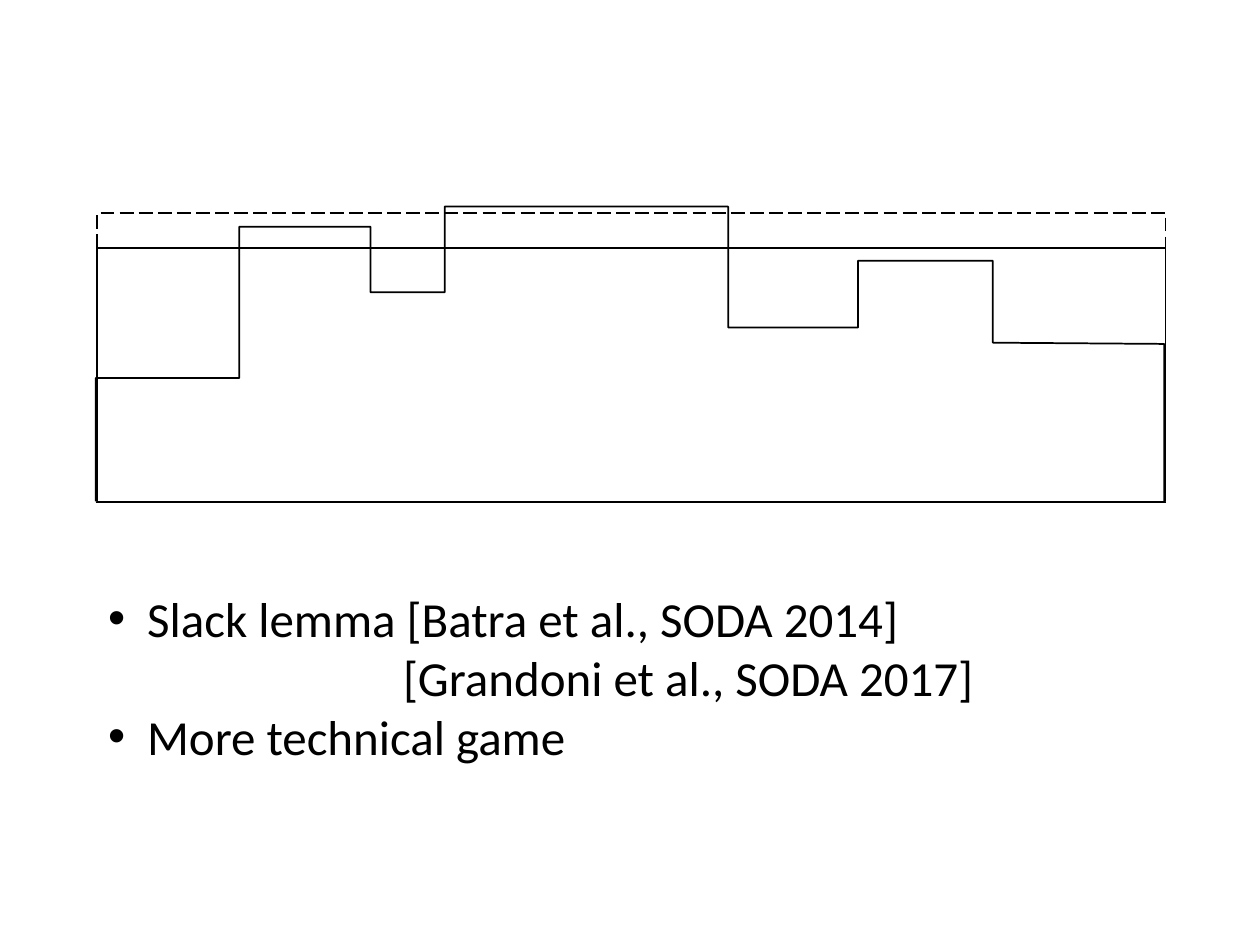
from lxml import etree
from pptx import Presentation
from pptx.dml.color import RGBColor
from pptx.enum.dml import MSO_LINE
from pptx.enum.shapes import MSO_CONNECTOR, MSO_SHAPE
from pptx.enum.text import MSO_AUTO_SIZE
from pptx.oxml.ns import qn
from pptx.util import Inches, Pt

STRAIGHT = MSO_CONNECTOR.STRAIGHT
RECTANGLE = MSO_SHAPE.RECTANGLE
LONG_DASH = MSO_LINE.LONG_DASH
FIT_SHAPE = MSO_AUTO_SIZE.SHAPE_TO_FIT_TEXT

COLORS = {"ink": "000000"}
FONT = "Calibri"
SKYLINE = [
    (0, 2.34), (0, 1.36), (1.14, 1.36), (1.14, 0.16), (2.18, 0.16),
    (2.18, 0.68), (2.77, 0.68), (2.77, 0), (5.02, 0), (5.02, 0.96),
    (6.05, 0.96), (6.05, 0.43), (7.12, 0.43), (7.12, 1.08), (8.48, 1.09),
    (8.48, 2.34),
]
POINTS = [
    ("Slack lemma [Batra et al., SODA 2014]", 0.31, True),
    ("[Grandoni et al., SODA 2017]", 2.34, False),
    ("More technical game", 0.31, True),
]


def style_line(line, width=1.0):
    """Draw a line in ink at the given width in points."""
    line.color.rgb = RGBColor.from_string(COLORS["ink"])
    line.width = Pt(width)


def style_outline(shape):
    """Leave a shape unfilled, without shadow, with an ink outline."""
    shape.shadow.inherit = False
    shape.fill.background()
    style_line(shape.line)


def add_frame(slide, left, top, width, height):
    """Add an outlined rectangle and return it."""
    frame = slide.shapes.add_shape(
        RECTANGLE, Inches(left), Inches(top), Inches(width), Inches(height))
    style_outline(frame)
    return frame


def add_skyline(slide, left, top, width, height):
    """Draw the stepped profile with its bounding strip, slack strip and base."""
    corners = [(Inches(left + x), Inches(top + y)) for x, y in SKYLINE]
    builder = slide.shapes.build_freeform(*corners[0])
    builder.add_line_segments(corners[1:], close=False)
    style_outline(builder.convert_to_shape())

    strip_top, slack = top + 0.33, 0.28
    add_frame(slide, left + 0.01, strip_top, width, top + height - strip_top)
    base_y = Inches(top + height + 0.01)
    base = slide.shapes.add_connector(
        STRAIGHT, Inches(left), base_y, Inches(left + width + 0.01), base_y)
    style_line(base.line, 0.75)
    etree.SubElement(base._element.spPr, qn("a:effectLst"))
    slack_frame = add_frame(slide, left + 0.01, strip_top - slack, width, slack)
    slack_frame.line.dash_style = LONG_DASH


def set_indent(paragraph, margin, bulleted):
    """Set the left margin and give the paragraph a hanging bullet if wanted."""
    properties = paragraph._p.get_or_add_pPr()
    properties.set("marL", str(Inches(margin)))
    properties.set("indent", str(Inches(-0.31) if bulleted else 0))
    if bulleted:
        etree.SubElement(properties, qn("a:buFont"), typeface="Arial")
        etree.SubElement(properties, qn("a:buChar"), char="•")
    else:
        etree.SubElement(properties, qn("a:buNone"))


def add_points(slide, left, top, width, height):
    """Write the bulleted remarks."""
    box = slide.shapes.add_textbox(
        Inches(left), Inches(top), Inches(width), Inches(height))
    frame = box.text_frame
    frame.word_wrap = True
    frame.auto_size = FIT_SHAPE
    frame.text = "\n".join(text for text, _, _ in POINTS)
    for paragraph, (_, margin, bulleted) in zip(frame.paragraphs, POINTS):
        set_indent(paragraph, margin, bulleted)
        font = paragraph.runs[0].font
        font.name = FONT
        font.size = Pt(28)
        font.color.rgb = RGBColor.from_string(COLORS["ink"])


def main():
    """Build and save the slide."""
    deck = Presentation()
    deck.slide_width, deck.slide_height = Inches(10), Inches(7.5)
    slide = deck.slides.add_slide(deck.slide_layouts[6])
    add_skyline(slide, 0.76, 1.64, 8.48, 2.34)
    add_points(slide, 0.76, 4.62, 8.48, 1.51)
    deck.save("out.pptx")


if __name__ == "__main__":
    main()
